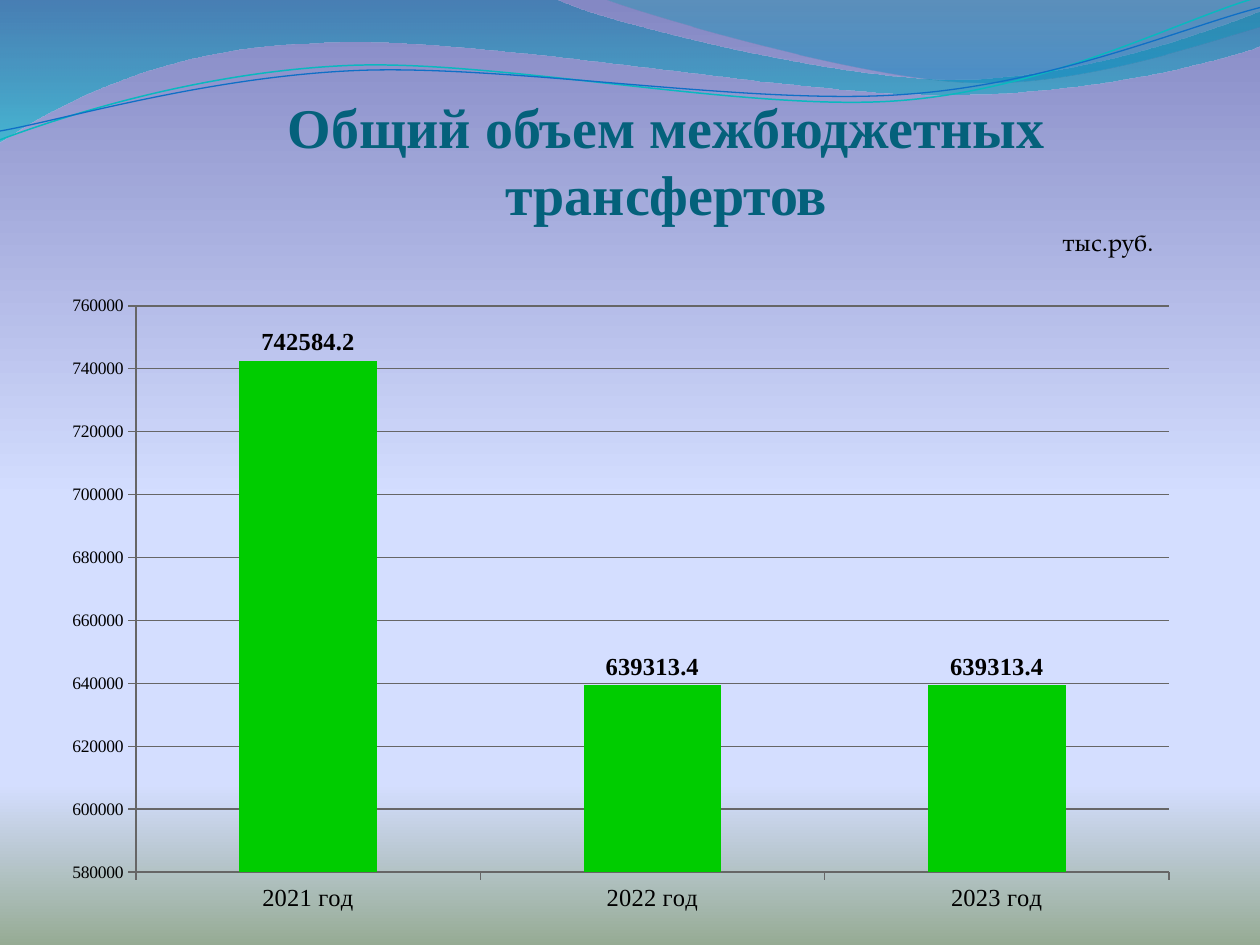
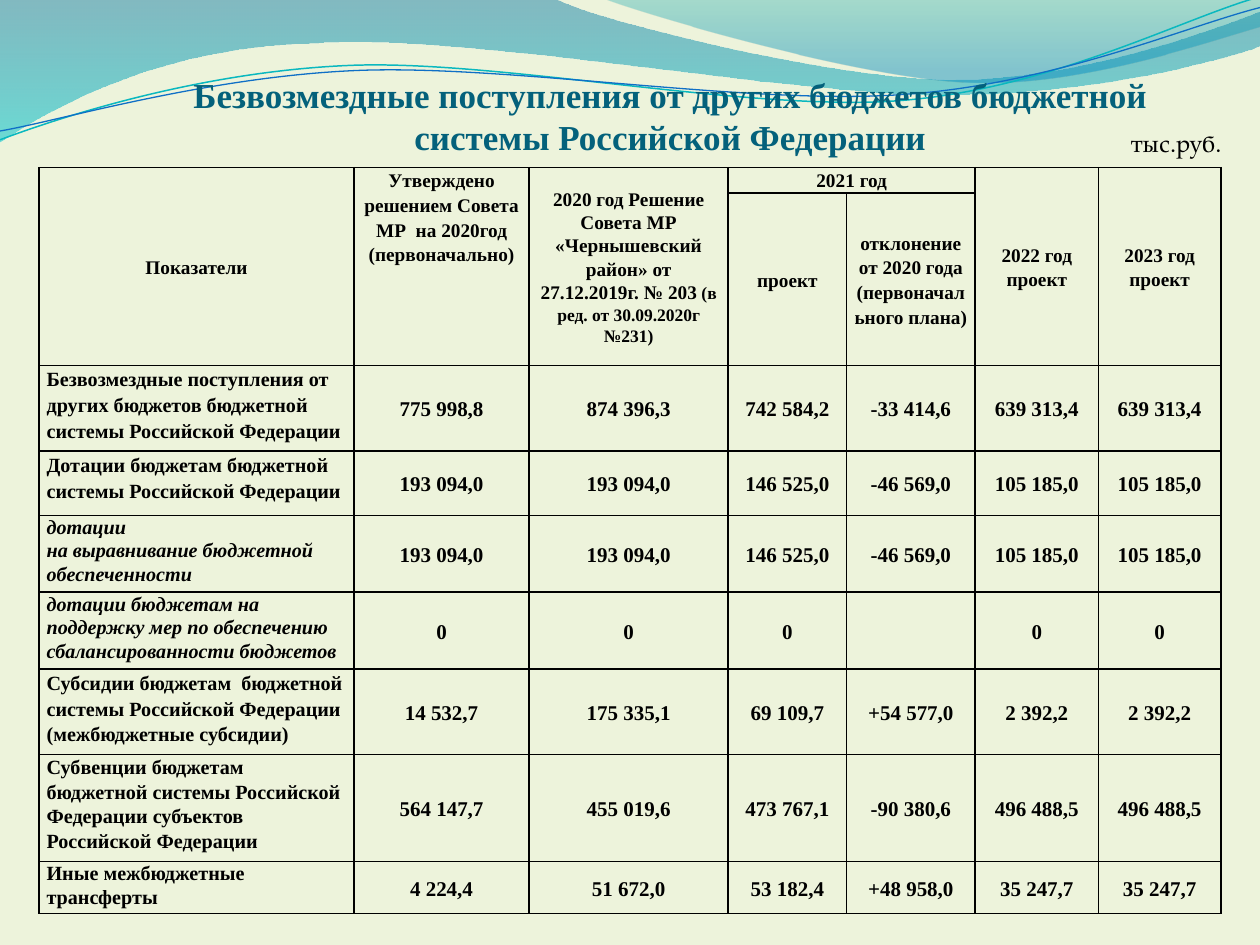
from dataclasses import dataclass

from lxml import etree
from pptx import Presentation
from pptx.chart.data import CategoryChartData
from pptx.dml.color import RGBColor
from pptx.enum.chart import XL_CHART_TYPE, XL_LABEL_POSITION, XL_TICK_MARK
from pptx.enum.text import MSO_ANCHOR, MSO_AUTO_SIZE, PP_ALIGN
from pptx.oxml.ns import qn
from pptx.util import Inches, Pt

COLUMNS = XL_CHART_TYPE.COLUMN_CLUSTERED
ABOVE_BAR = XL_LABEL_POSITION.OUTSIDE_END
TICK_OUT = XL_TICK_MARK.OUTSIDE
TOP, MIDDLE, BOTTOM = MSO_ANCHOR.TOP, MSO_ANCHOR.MIDDLE, MSO_ANCHOR.BOTTOM
LEFT, CENTER = PP_ALIGN.LEFT, PP_ALIGN.CENTER
NO_AUTOFIT = MSO_AUTO_SIZE.NONE


@dataclass(frozen=True)
class Theme:
    serif: str = "Times New Roman"
    body: str = "TeX Gyre Pagella"
    title: str = "04617B"
    text: str = "000000"
    bar: str = "00CC00"
    axis: str = "666666"
    plain_bg: str = "EDF3DB"
    big_title: float = 32
    small_title: float = 20
    unit: float = 14
    axis_size: float = 10
    chart_label: float = 14
    header: float = 11
    header_note: float = 10
    row_label: float = 11.5
    value: float = 12
    spacing: float = 1.15
    snug: float = 1.09
    tight: float = 1.05


@dataclass(frozen=True)
class Stop:
    percent: int
    color: str
    opacity: int = 100


@dataclass(frozen=True)
class Wave:
    """Points in inches; a segment of two numbers is a line, of six a curve."""
    start: tuple[float, float]
    segments: tuple[tuple[float, ...], ...]
    stops: tuple[Stop, ...] = ()
    line: str = ""
    width: float = 0


THEME = Theme()


@dataclass(frozen=True)
class TableRow:
    label: str
    values: tuple[str, ...]
    italic: bool = False
    spacing: float = THEME.spacing


@dataclass(frozen=True)
class Header:
    row: int
    col: int
    text: str
    rows: int = 1
    cols: int = 1
    anchor: MSO_ANCHOR = MIDDLE
    note: str = ""
    spacing: float = THEME.spacing


SKY = (Stop(0, "8488C4"), Stop(53, "D4DEFF"), Stop(83, "D4DEFF"), Stop(100, "96AB94"))
WAVES = (
    Wave((0, 0), ((4.4, -0.01), (4.76, 0.17, 6.64, 0.63, 7.58, 0.63),
                  (8.53, 0.63, 9.58, 0.26, 10, 0.09), (10.01, 0.36),
                  (9.83, 0.44, 8.7, 0.76, 7.46, 0.75),
                  (6.22, 0.75, 3.82, 0.28, 2.57, 0.34),
                  (1.29, 0.36, 0.46, 0.83, -0.01, 1.13), (0, 0)),
         stops=(Stop(0, "0074A1", 45), Stop(100, "00C6CF", 55))),
    Wave((4.79, -0.01), ((5.09, 0.11, 6.82, 0.62, 7.69, 0.65),
                         (8.56, 0.69, 9.61, 0.32, 10, 0.21), (10, 0), (4.79, -0.01)),
         stops=(Stop(0, "00A1A9", 30), Stop(80, "008BBF", 45))),
    Wave((0, 1.11), ((0.48, 0.93, 1.58, 0.57, 2.77, 0.52),
                     (3.95, 0.47, 5.93, 0.89, 7.13, 0.8),
                     (8.33, 0.71, 9.38, 0.15, 9.98, -0.02)),
         line="0AB8BF", width=0.85),
    Wave((0, 1.04), ((0.47, 0.96, 1.64, 0.61, 2.83, 0.56),
                     (4.03, 0.51, 5.97, 0.84, 7.17, 0.75),
                     (8.36, 0.67, 9.41, 0.21, 10, 0.06)),
         line="0F6FC6", width=0.75),
)

YEARS = ("2021 год", "2022 год", "2023 год")
TRANSFERS = (742584.2, 639313.4, 639313.4)
PLOT_AREA = {"x": 0.076, "y": 0.035, "w": 0.905, "h": 0.883}

COL_WIDTHS = (2.5, 1.39, 1.58, 0.94, 1.02, 0.98, 0.97)
ROW_HEIGHTS = (0.2, 1.37, 0.68, 0.51, 0.61, 0.61, 0.68, 0.85, 0.41)
HEADERS = (
    Header(0, 0, "Показатели", rows=2),
    Header(0, 1, "Утверждено решением Совета МР  на 2020год (первоначально)", rows=2, anchor=TOP),
    Header(0, 2, "2020 год Решение Совета МР «Чернышевский район» от 27.12.2019г. № 203",
           rows=2, note=" (в ред. от 30.09.2020г №231)", spacing=THEME.snug),
    Header(0, 3, "2021 год", cols=2, spacing=THEME.tight),
    Header(0, 5, "2022 год проект", rows=2),
    Header(0, 6, "2023 год проект", rows=2),
    Header(1, 3, "проект"),
    Header(1, 4, "отклонение от 2020 года (первоначального плана)"),
)
BUDGET_ROWS = (
    TableRow("Безвозмездные поступления от других бюджетов бюджетной системы Российской Федерации",
             ("775 998,8", "874 396,3", "742 584,2", "-33 414,6", "639 313,4", "639 313,4")),
    TableRow("Дотации бюджетам бюджетной системы Российской Федерации",
             ("193 094,0", "193 094,0", "146 525,0", "-46 569,0", "105 185,0", "105 185,0")),
    TableRow("дотации\nна выравнивание бюджетной обеспеченности",
             ("193 094,0", "193 094,0", "146 525,0", "-46 569,0", "105 185,0", "105 185,0"),
             True, THEME.tight),
    TableRow("дотации бюджетам на поддержку мер по обеспечению сбалансированности бюджетов",
             ("0", "0", "0", "", "0", "0"), True, THEME.tight),
    TableRow("Субсидии бюджетам  бюджетной системы Российской Федерации (межбюджетные субсидии)",
             ("14 532,7", "175 335,1", "69 109,7", "+54 577,0", "2 392,2", "2 392,2")),
    TableRow("Субвенции бюджетам бюджетной системы Российской Федерации субъектов "
             "Российской Федерации",
             ("564 147,7", "455 019,6", "473 767,1", "-90 380,6", "496 488,5", "496 488,5"),
             spacing=THEME.snug),
    TableRow("Иные межбюджетные трансферты",
             ("4 224,4", "51 672,0", "53 182,4", "+48 958,0", "35 247,7", "35 247,7"),
             spacing=THEME.tight),
)


def rgb(color: str) -> RGBColor:
    return RGBColor.from_string(color)


def style_font(font, size: float, name: str, color: str = THEME.text,
               bold: bool = False, italic: bool = False) -> None:
    font.size, font.name, font.bold, font.italic = Pt(size), name, bold, italic
    font.color.rgb = rgb(color)


def add_run(p, text: str, size: float, name: str = THEME.serif, **style) -> None:
    r = p.add_run()
    r.text = text
    style_font(r.font, size, name, **style)


def paint_gradient(fill, owner, stops: tuple[Stop, ...]) -> None:
    """Fill from top to bottom; owner is the element that holds the fill."""
    fill.gradient()
    fill.gradient_angle = 270
    stop_list = owner.find(".//" + qn("a:gsLst"))
    for old in list(stop_list):
        stop_list.remove(old)
    for stop in stops:
        gs = etree.SubElement(stop_list, qn("a:gs"), pos=str(stop.percent * 1000))
        clr = etree.SubElement(gs, qn("a:srgbClr"), val=stop.color)
        if stop.opacity < 100:
            etree.SubElement(clr, qn("a:alpha"), val=str(stop.opacity * 1000))


def bend_curves(shape, wave: Wave) -> None:
    """Join the three straight steps of each curved segment into one Bezier curve."""
    steps = iter(shape._element.findall(".//" + qn("a:lnTo")))
    for segment in wave.segments:
        first = next(steps)
        if len(segment) == 6:
            first.tag = qn("a:cubicBezTo")
            for _ in range(2):
                step = next(steps)
                first.append(step[0])
                step.getparent().remove(step)


def add_wave(s, wave: Wave) -> None:
    x, y = wave.start
    builder = s.shapes.build_freeform(Inches(x), Inches(y))
    points = [(Inches(seg[i]), Inches(seg[i + 1]))
              for seg in wave.segments for i in range(0, len(seg), 2)]
    builder.add_line_segments(points, close=bool(wave.stops))
    shape = builder.convert_to_shape()
    bend_curves(shape, wave)
    shape.shadow.inherit = False
    if wave.stops:
        paint_gradient(shape.fill, shape._element, wave.stops)
        shape.line.fill.background()
    else:
        shape.fill.background()
        shape.line.color.rgb = rgb(wave.line)
        shape.line.width = Pt(wave.width)


def add_title(s, text: str, size: float, box: tuple[float, ...]) -> None:
    title = s.shapes.title
    s.shapes._spTree.append(title._element)  # in front of the waves
    title.left, title.top, title.width, title.height = map(Inches, box)
    tf = title.text_frame
    tf.word_wrap, tf.auto_size, tf.vertical_anchor = True, NO_AUTOFIT, BOTTOM
    tf.margin_left = tf.margin_right = tf.margin_bottom = 0
    tf.margin_top = Inches(0.05)
    p = tf.paragraphs[0]
    p.alignment = CENTER
    add_run(p, text, size, color=THEME.title, bold=True)


def add_unit(s, left: float, top: float) -> None:
    tf = s.shapes.add_textbox(Inches(left), Inches(top), Inches(1.33), Inches(0.23)).text_frame
    tf.word_wrap, tf.vertical_anchor = True, MIDDLE
    p = tf.paragraphs[0]
    p.alignment = CENTER
    add_run(p, "тыс.руб.", THEME.unit, THEME.body)


def add_base_slide(prs, title: str, size: float, title_box: tuple[float, ...],
                   unit_at: tuple[float, float], sky: tuple[Stop, ...] = ()):
    s = prs.slides.add_slide(prs.slide_layouts[5])
    fill = s.background.fill
    if sky:
        paint_gradient(fill, s._element, sky)
    else:
        fill.solid()
        fill.fore_color.rgb = rgb(THEME.plain_bg)
    for wave in WAVES:
        add_wave(s, wave)
    add_title(s, title, size, title_box)
    add_unit(s, *unit_at)
    return s


def fix_plot_area(chart) -> None:
    area = chart._chartSpace.find(".//" + qn("c:plotArea"))
    for old in area.findall(qn("c:layout")):
        area.remove(old)
    layout = etree.Element(qn("c:layout"))
    manual = etree.SubElement(layout, qn("c:manualLayout"))
    etree.SubElement(manual, qn("c:layoutTarget"), val="inner")
    for side in "xy":
        etree.SubElement(manual, qn(f"c:{side}Mode"), val="edge")
    for key, share in PLOT_AREA.items():
        etree.SubElement(manual, qn(f"c:{key}"), val=str(share))
    area.insert(0, layout)


def add_transfer_chart(s) -> None:
    data = CategoryChartData(number_format="General")
    data.categories = YEARS
    data.add_series("Series 1", TRANSFERS)
    chart = s.shapes.add_chart(COLUMNS, Inches(0.39), Inches(2.25),
                               Inches(9.06), Inches(5.09), data).chart
    chart.has_legend = chart.has_title = False
    style_font(chart.font, THEME.axis_size, THEME.body)
    fix_plot_area(chart)

    values, years = chart.value_axis, chart.category_axis
    values.minimum_scale, values.maximum_scale, values.major_unit = 580000, 760000, 20000
    values.has_major_gridlines = True
    for axis, size in ((values, THEME.axis_size), (years, THEME.chart_label)):
        axis.major_tick_mark = TICK_OUT
        style_font(axis.tick_labels.font, size, THEME.serif)
    for line in (values.format.line, years.format.line, values.major_gridlines.format.line):
        line.color.rgb = rgb(THEME.axis)
        line.width = Pt(0.75)

    plot = chart.plots[0]
    plot.gap_width, plot.vary_by_categories = 150, False
    fill = plot.series[0].format.fill
    fill.solid()
    fill.fore_color.rgb = rgb(THEME.bar)
    labels = plot.series[0].data_labels
    labels.show_value, labels.position = True, ABOVE_BAR
    style_font(labels.font, THEME.chart_label, THEME.serif, bold=True)


def frame_cell(cell) -> None:
    """Clear the fill, set the margins and draw thin borders on all sides."""
    cell.margin_left = cell.margin_right = Inches(0.06)
    cell.margin_top = cell.margin_bottom = 0
    props = cell._tc.get_or_add_tcPr()
    for side in "LRTB":
        ln = etree.SubElement(props, qn(f"a:ln{side}"), w=str(Pt(1)))
        solid = etree.SubElement(ln, qn("a:solidFill"))
        etree.SubElement(solid, qn("a:srgbClr"), val=THEME.text)
    cell.fill.background()


def write_cell(cell, text: str, size: float, align: PP_ALIGN = CENTER, anchor: MSO_ANCHOR = MIDDLE,
               italic: bool = False, spacing: float = THEME.spacing) -> None:
    cell.vertical_anchor = anchor
    tf = cell.text_frame
    for i, line in enumerate(text.split("\n")):
        p = tf.add_paragraph() if i else tf.paragraphs[0]
        p.alignment, p.line_spacing = align, spacing
        if line:
            add_run(p, line, size, bold=True, italic=italic)


def add_budget_table(s) -> None:
    table = s.shapes.add_table(len(ROW_HEIGHTS), len(COL_WIDTHS), Inches(0.31), Inches(1.33),
                               Inches(sum(COL_WIDTHS)), Inches(sum(ROW_HEIGHTS))).table
    table.first_row = table.horz_banding = False
    for col, width in zip(table.columns, COL_WIDTHS):
        col.width = Inches(width)
    for row, height in zip(table.rows, ROW_HEIGHTS):
        row.height = Inches(height)
    for cell in table.iter_cells():
        frame_cell(cell)
    for h in HEADERS:
        cell = table.cell(h.row, h.col)
        if h.rows * h.cols > 1:
            cell.merge(table.cell(h.row + h.rows - 1, h.col + h.cols - 1))
        write_cell(cell, h.text, THEME.header, anchor=h.anchor, spacing=h.spacing)
        if h.note:
            add_run(cell.text_frame.paragraphs[0], h.note, THEME.header_note, bold=True)
    for i, row in enumerate(BUDGET_ROWS, start=2):
        write_cell(table.cell(i, 0), row.label, THEME.row_label, LEFT, TOP, row.italic, row.spacing)
        for j, value in enumerate(row.values, start=1):
            write_cell(table.cell(i, j), value, THEME.value)


def main() -> None:
    prs = Presentation()
    prs.slide_width, prs.slide_height = Inches(10), Inches(7.5)
    s = add_base_slide(prs, "Общий объем межбюджетных трансфертов", THEME.big_title,
                       (1.02, 0.55, 8.54, 1.25), (8.13, 1.8), SKY)
    add_transfer_chart(s)
    s = add_base_slide(prs, "Безвозмездные поступления от других бюджетов бюджетной системы "
                       "Российской Федерации", THEME.small_title,
                       (1.09, 0, 8.46, 1.25), (8.67, 1.02))
    add_budget_table(s)
    prs.save("out.pptx")


if __name__ == "__main__":
    main()
